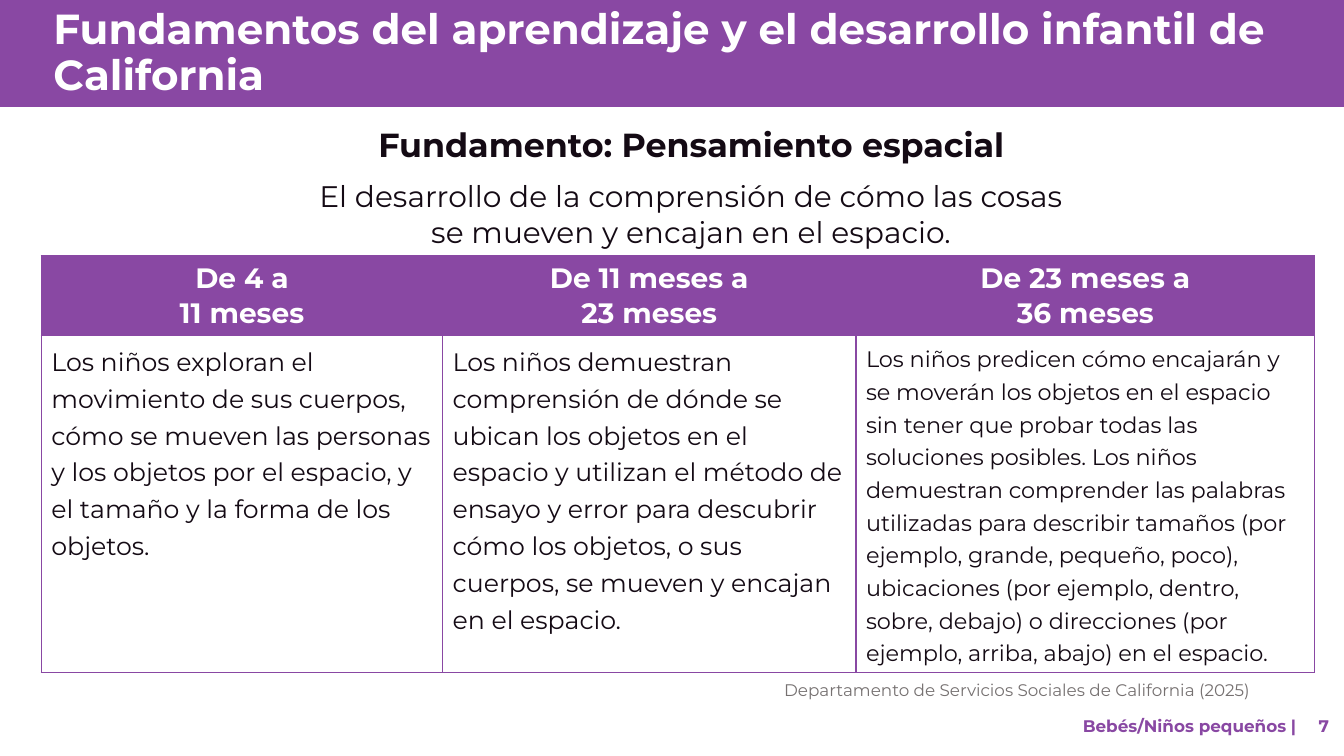
from lxml.etree import SubElement
from pptx import Presentation
from pptx.dml.color import RGBColor
from pptx.enum.shapes import MSO_SHAPE
from pptx.enum.text import MSO_ANCHOR, PP_ALIGN
from pptx.oxml.ns import qn
from pptx.util import Inches, Pt

PURPLE = RGBColor(0x89, 0x48, 0xA3)
INK = RGBColor(0x14, 0x0A, 0x14)
GRAY = RGBColor(0x76, 0x71, 0x71)
WHITE = RGBColor(0xFF, 0xFF, 0xFF)

COLUMN_WIDTHS = [3.98, 4.1, 4.55]
ROW_HEIGHTS = [0.79, 3.34]
HEADINGS = ["De 4 a\v11 meses", "De 11 meses a\v23 meses", "De 23 meses a\v36 meses"]
DESCRIPTIONS = [
    ["Los niños exploran el movimiento de sus cuerpos,",
     "cómo se mueven las personas y los objetos por el espacio, y el tamaño "
     "y la forma de los objetos."],
    ["Los niños demuestran comprensión de dónde se ubican los objetos en el "
     "espacio y utilizan el método de ensayo y error para descubrir cómo los "
     "objetos, o sus cuerpos, se mueven y encajan en el espacio."],
    ["Los niños predicen cómo encajarán y se moverán los objetos en el espacio "
     "sin tener que probar todas las soluciones posibles. Los niños demuestran "
     "comprender las palabras utilizadas para describir tamaños (por ejemplo, "
     "grande, pequeño, poco), ubicaciones (por ejemplo, dentro, sobre, debajo) "
     "o direcciones (por ejemplo, arriba, abajo) en el espacio."],
]
DESCRIPTION_SIZES = [18, 18, 16]


def write(paragraph, text, size, color, bold=False, **layout):
    """Fill a paragraph; layout holds paragraph attributes such as alignment."""
    paragraph.text = text
    for name, value in layout.items():
        setattr(paragraph, name, value)
    for span in paragraph.runs:
        for name, value in {"name": "Montserrat", "size": Pt(size), "bold": bold}.items():
            setattr(span.font, name, value)
        span.font.color.rgb = color


def add_text_box(left, top, width, height):
    frame = page.shapes.add_textbox(
        Inches(left), Inches(top), Inches(width), Inches(height)).text_frame
    frame.word_wrap = True
    return frame


deck = Presentation()
deck.slide_width, deck.slide_height = Inches(13.33), Inches(7.5)
page = deck.slides.add_slide(deck.slide_layouts[5])

# Title on its band
band = page.shapes.add_shape(MSO_SHAPE.RECTANGLE, 0, 0, deck.slide_width, Inches(1.06))
band.shadow.inherit = False
band.fill.solid()
band.fill.fore_color.rgb = PURPLE
band.line.fill.background()

title = page.shapes.title
band.element.addnext(title.element)
title.left, title.top = Inches(0.43), Inches(0.03)
title.width, title.height = Inches(12.91), Inches(1.01)
title.text_frame.vertical_anchor = MSO_ANCHOR.MIDDLE
write(title.text_frame.paragraphs[0],
      "Fundamentos del aprendizaje y el desarrollo infantil de California",
      30, WHITE, True, alignment=PP_ALIGN.LEFT, line_spacing=0.9)

# Foundation and its definition
foundation = add_text_box(0.93, 1.18, 11.85, 1.35)
write(foundation.paragraphs[0], "Fundamento: Pensamiento espacial",
      23.8, INK, True, alignment=PP_ALIGN.CENTER)
write(foundation.add_paragraph(),
      "El desarrollo de la comprensión de cómo las cosas\v"
      "se mueven y encajan en el espacio.",
      21.2, INK, alignment=PP_ALIGN.CENTER, space_before=Pt(10))

# Age table
table = page.shapes.add_table(
    2, 3, Inches(0.41), Inches(2.54),
    Inches(sum(COLUMN_WIDTHS)), Inches(sum(ROW_HEIGHTS))).table
for column, width in zip(table.columns, COLUMN_WIDTHS):
    column.width = Inches(width)
for row, height in zip(table.rows, ROW_HEIGHTS):
    row.height = Inches(height)

for cell in table.iter_cells():
    properties = cell._tc.get_or_add_tcPr()
    for side in ("a:lnL", "a:lnR", "a:lnT", "a:lnB"):
        border = SubElement(properties, qn(side), w=str(Pt(1)))
        SubElement(SubElement(border, qn("a:solidFill")), qn("a:srgbClr"), val=str(PURPLE))
    cell.fill.solid()

for index, heading in enumerate(HEADINGS):
    top_cell, body_cell = table.cell(0, index), table.cell(1, index)
    top_cell.fill.fore_color.rgb = PURPLE
    top_cell.vertical_anchor = MSO_ANCHOR.MIDDLE
    write(top_cell.text_frame.paragraphs[0], heading, 20, WHITE, True,
          alignment=PP_ALIGN.CENTER)
    body_cell.fill.fore_color.rgb = WHITE
    frame = body_cell.text_frame
    for number, text in enumerate(DESCRIPTIONS[index]):
        paragraph = frame.add_paragraph() if number else frame.paragraphs[0]
        write(paragraph, text, DESCRIPTION_SIZES[index], INK, line_spacing=1.2)

# Credit and footer
credit = add_text_box(0.83, 6.69, 11.67, 0.3)
write(credit.paragraphs[0], "Departamento de Servicios Sociales de California (2025)",
      12, GRAY, alignment=PP_ALIGN.RIGHT)

footer = add_text_box(9.49, 7, 3.81, 0.4)
footer.vertical_anchor = MSO_ANCHOR.MIDDLE
footer_line = footer.paragraphs[0]
tabs = SubElement(footer_line._p.get_or_add_pPr(), qn("a:tabLst"))
for position, alignment in ((3.27, "r"), (3.49, "l")):
    SubElement(tabs, qn("a:tab"), pos=str(Inches(position)), algn=alignment)
write(footer_line, "\tBebés/Niños pequeños |\t7", 12, PURPLE, True)

deck.save("out.pptx")
